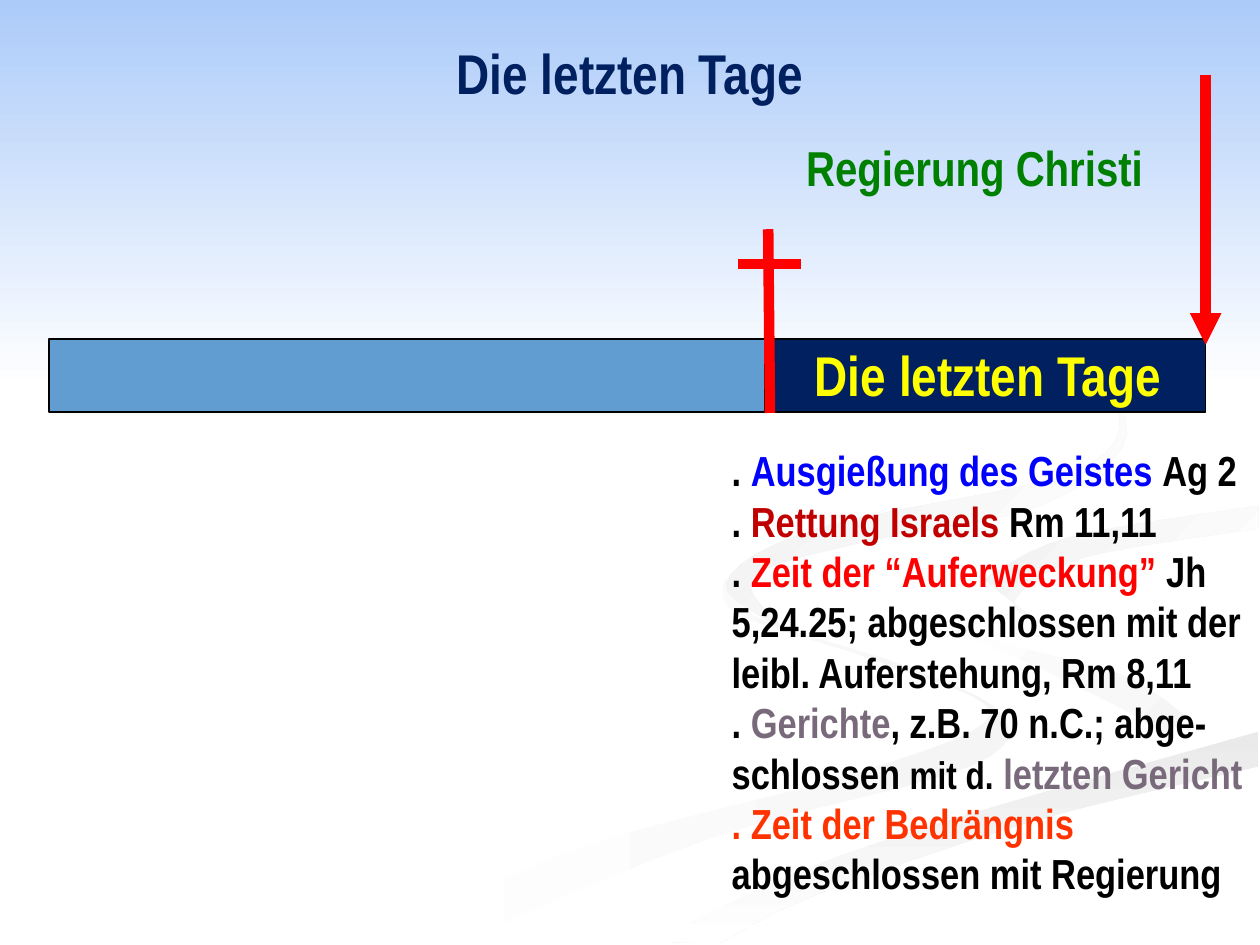
from lxml import etree
from pptx import Presentation, util as u
from pptx.dml.color import RGBColor
from pptx.enum import shapes, text
from pptx.oxml.ns import qn

Pt = u.Pt
FONT = "Arial Narrow"
WIDTH, HEIGHT = 720, 540
WHITE = RGBColor.from_string("FFFFFF")
BLACK = RGBColor.from_string("000000")
NAVY = RGBColor.from_string("002060")
SKY = RGBColor.from_string("ACCBF9")
STEEL = RGBColor.from_string("629DD1")
RED = RGBColor.from_string("FF0000")
DARK_RED = RGBColor.from_string("C00000")
ORANGE = RGBColor.from_string("FF3300")
YELLOW = RGBColor.from_string("FFFF00")
GREEN = RGBColor.from_string("008000")
BLUE = RGBColor.from_string("0000FF")
MAUVE = RGBColor.from_string("78697B")
MIST = RGBColor.from_string("F5F5F5")
PEARL = RGBColor.from_string("EAEAEA")
SILVER = RGBColor.from_string("F1F1F1")
ASH = RGBColor.from_string("EDEDED")

# Edges shared by neighbouring ribbons
INNER_BEND = [(522, 334), (557, 362), (640, 385), (679, 410)]
NEAR_BANK = [(374, 538), (454, 499), (551, 466), (719, 418)]
FAR_BEND = [(719, 289), (611, 307), (562, 331)]

# Background, back to front: (start colour, end colour, clockwise angle, edges)
RIBBONS = [
    (WHITE, MIST, 0, [
        [(414, 330), (433, 353), (515, 380), (572, 408), (554, 438), (406, 479), (260, 539)],
        [(216, 539), (330, 485), (492, 441), (566, 408), (502, 378), (422, 351), (414, 330)]]),
    (WHITE, MIST, 45, [
        INNER_BEND, [(644, 436), (661, 418), (603, 386), (528, 351), (522, 334)]]),
    (PEARL, WHITE, 90, [
        NEAR_BANK, [(719, 438), (591, 469), (467, 511), (411, 539)]]),
    (WHITE, WHITE, 0, [
        INNER_BEND, [(679, 410), (626, 440), (477, 481), (343, 539)],
        NEAR_BANK, [(719, 387), (611, 362), (562, 331)],
        FAR_BEND[::-1], [(719, 279), (582, 300), (522, 334)]]),
    (SILVER, WHITE, 45, [
        FAR_BEND, [(595, 357), (580, 343), (618, 319), (719, 302)]]),
    (ASH, WHITE, 45, [
        [(549, 168), (607, 198), (644, 248), (594, 289), (492, 310), (430, 330), (448, 360)],
        [(448, 360), (415, 333), (467, 302), (606, 272), (640, 241), (609, 201), (549, 168)]]),
    (SKY, WHITE, 90, [[(0, 0), (WIDTH, 0)], [(WIDTH, 222), (0, 222)]]),
]

# Timeline: the cross stands where the last days begin, the arrow where they end
START, CROSS, END = 28, 440, 689
BAR_TOP, BAR_BOTTOM = 193.7, 235.5
BARS = [(START, 437, STEEL), (CROSS, END, NAVY)]
BASELINE = ((START, BAR_BOTTOM), (603, BAR_BOTTOM), BLACK, 1, False)
CROSS_AND_ARROW = [
    ((CROSS - 1, 131), (CROSS, 236), RED, 6, False),
    ((CROSS - 18, 151), (CROSS + 18, 151), RED, 6, False),
    ((END, 43), (END, 197), RED, 6, True),
]

# Texts: paragraphs are lists of (text, colour) or (text, colour, own size)
TITLE = [[("Die letzten Tage", NAVY)]]
ERA = [[("Die letzten Tage", YELLOW)]]
REIGN = [[("Regierung Christi", GREEN)]]
EVENTS = [
    [(". ", BLACK), ("Ausgießung des Geistes ", BLUE), ("Ag 2", BLACK)],
    [(". ", BLACK), ("Rettung Israels ", DARK_RED), ("Rm 11,11", BLACK)],
    [(". ", BLACK), ("Zeit der “Auferweckung” ", RED),
     ("Jh 5,24.25; abgeschlossen mit der leibl. Auferstehung, Rm 8,11", BLACK)],
    [(". ", BLACK), ("Gerichte", MAUVE), (", z.B. 70 n.C.; abge-schlossen ", BLACK),
     ("mit d.", BLACK, 22), (" ", BLACK), ("letzten Gericht", MAUVE)],
    [(". Zeit der Bedrängnis", ORANGE)],
    [("abgeschlossen mit Regierung", BLACK)],
]


def smooth_edge(edge, steps=6):
    """Points of a Catmull-Rom curve through the points of an edge."""
    if len(edge) == 2:
        return edge
    padded = [edge[0], *edge, edge[-1]]
    curve = [edge[0]]
    for a, b, c, d in zip(padded, padded[1:], padded[2:], padded[3:]):
        for step in range(1, steps + 1):
            t = step / steps
            curve.append(tuple(
                q + (t * (r - p) + t**2 * (2*p - 5*q + 4*r - s) + t**3 * (3*q - p - 3*r + s)) / 2
                for p, q, r, s in zip(a, b, c, d)))
    return curve


def add_ribbon(slide, start, end, angle, edges):
    outline = [point for edge in edges for point in smooth_edge(edge)]
    points = [(Pt(x), Pt(y)) for x, y in outline]
    builder = slide.shapes.build_freeform(*points[0])
    builder.add_line_segments(points[1:], close=True)
    ribbon = builder.convert_to_shape()
    ribbon.shadow.inherit = False
    ribbon.line.fill.background()
    if start == end:
        ribbon.fill.solid()
        ribbon.fill.fore_color.rgb = start
        return
    ribbon.fill.gradient()
    ribbon.fill.gradient_angle = -angle % 360
    for stop, colour in zip(ribbon.fill.gradient_stops, (start, end)):
        stop.color.rgb = colour


def add_bar(slide, left, right, colour):
    bar = slide.shapes.add_shape(shapes.MSO_SHAPE.RECTANGLE, Pt(left), Pt(BAR_TOP),
                                 Pt(right - left), Pt(BAR_BOTTOM - BAR_TOP))
    bar.shadow.inherit = False
    bar.fill.solid()
    bar.fill.fore_color.rgb = colour
    bar.line.color.rgb = BLACK
    bar.line.width = Pt(1)


def add_line(slide, start, end, colour, width, arrow):
    connector = slide.shapes.add_connector(shapes.MSO_CONNECTOR.STRAIGHT,
                                           *map(Pt, start), *map(Pt, end))
    connector.line.color.rgb = colour
    connector.line.width = Pt(width)
    properties = connector._element.spPr
    if arrow:
        etree.SubElement(properties.find(qn("a:ln")), qn("a:tailEnd"), type="triangle")
    etree.SubElement(properties, qn("a:effectLst"))


def add_text(slide, box, paragraphs, size,
             align=text.PP_ALIGN.LEFT, anchor=text.MSO_ANCHOR.TOP):
    frame = slide.shapes.add_textbox(*map(Pt, box)).text_frame
    frame.word_wrap = True
    frame.vertical_anchor = anchor
    for index, runs in enumerate(paragraphs):
        paragraph = frame.add_paragraph() if index else frame.paragraphs[0]
        paragraph.alignment = align
        for words, colour, *own_size in runs:
            run = paragraph.add_run()
            run.text = words
            run.font.name = FONT
            run.font.bold = True
            run.font.size = Pt(own_size[0] if own_size else size)
            run.font.color.rgb = colour


def main():
    deck = Presentation()
    deck.slide_width, deck.slide_height = Pt(WIDTH), Pt(HEIGHT)
    slide = deck.slides.add_slide(deck.slide_layouts[6])

    # Background
    for ribbon in RIBBONS:
        add_ribbon(slide, *ribbon)

    # Title
    add_text(slide, (0, 0, WIDTH, 83), TITLE, 32,
             text.PP_ALIGN.CENTER, text.MSO_ANCHOR.MIDDLE)

    # Timeline
    add_line(slide, *BASELINE)
    for bar in BARS:
        add_bar(slide, *bar)
    for line in CROSS_AND_ARROW:
        add_line(slide, *line)

    # Labels and events
    add_text(slide, (458.6, 191, 230.4, 46), ERA, 32)
    add_text(slide, (411, 250.6, 309, 269), EVENTS, 24)
    add_text(slide, (453.6, 75, 218, 41), REIGN, 28)
    deck.save("out.pptx")


if __name__ == "__main__":
    main()
